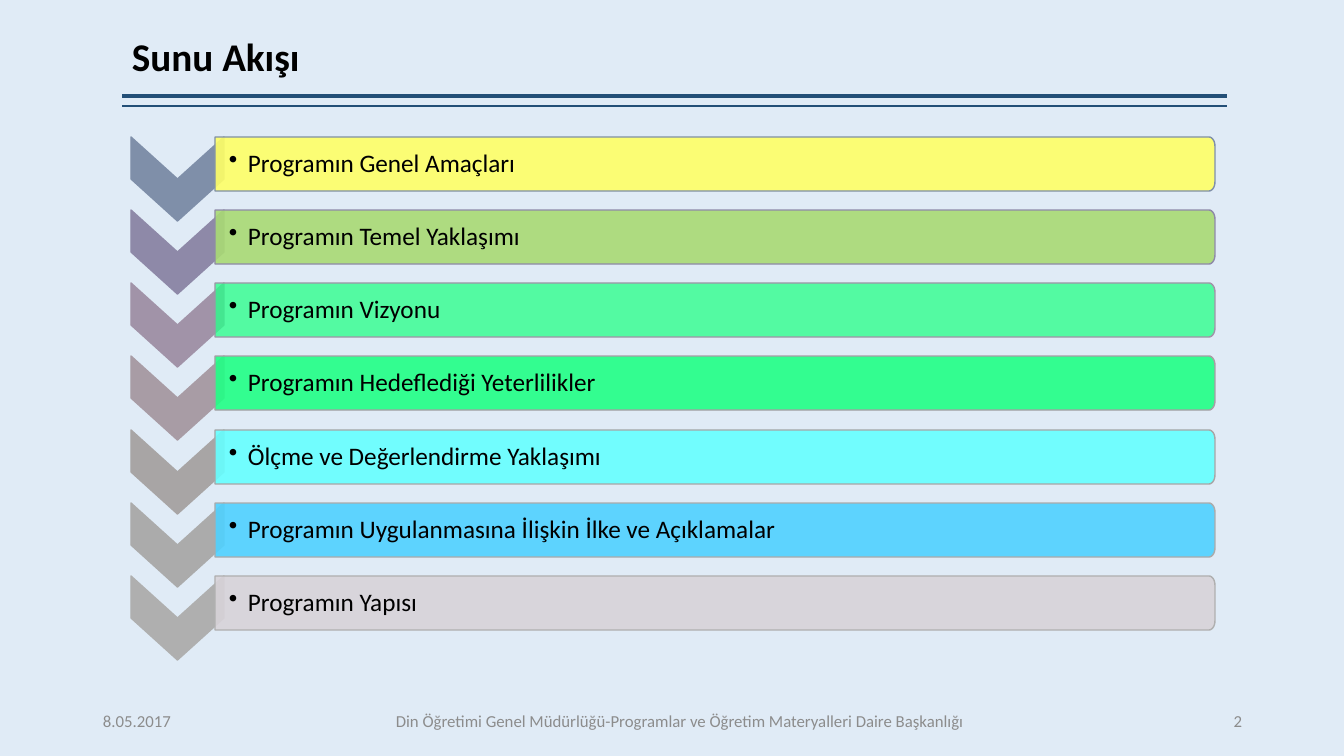
"""Build the agenda slide with seven chevrons and labelled bars."""
import math

from lxml import etree
from pptx import Presentation
from pptx.dml.color import RGBColor
from pptx.enum.shapes import MSO_CONNECTOR
from pptx.enum.text import MSO_ANCHOR, PP_ALIGN
from pptx.oxml.ns import qn
from pptx.util import Pt

STRAIGHT = MSO_CONNECTOR.STRAIGHT
MIDDLE = MSO_ANCHOR.MIDDLE
LEFT, CENTER, RIGHT = PP_ALIGN.LEFT, PP_ALIGN.CENTER, PP_ALIGN.RIGHT

PAGE_WIDTH, PAGE_HEIGHT = 1344, 756
EMU_PER_PX = 12192000 / PAGE_WIDTH
FONT = "Calibri"
COLORS = {
    "background": "E0EBF6",
    "rule": "234F77",
    "text": "000000",
    "footer": "8C8C8C",
}
TOPICS = [
    ("Programın Genel Amaçları", "7F8FA9", "FFFF66", 90),
    ("Programın Temel Yaklaşımı", "8E89A8", "A9DA74", 90),
    ("Programın Vizyonu", "A193A8", "29FF8A", 77),
    ("Programın Hedeflediği Yeterlilikler", "A89CA5", "21FF85", 90),
    ("Ölçme ve Değerlendirme Yaklaşımı", "A8A5A5", "66FFFF", 90),
    ("Programın Uygulanmasına İlişkin İlke ve Açıklamalar", "ABABAB", "4FD1FF", 90),
    ("Programın Yapısı", "AFAFAF", "D8D3D9", 90),
]
FIRST_TOP, LAST_TOP = 137, 576
CHEVRON_LEFT, CHEVRON_WIDTH, CHEVRON_ARM = 131, 93, 42
BAR_LEFT, BAR_RIGHT, BAR_HEIGHT = 215, 1215, 54
CORNER_WIDTH, CORNER_HEIGHT, CORNER_STEPS = 6, 9, 8
FOOTER_TOP, FOOTER_HEIGHT = 701, 40


def px(length):
    """Turn pixels into EMU."""
    return round(length * EMU_PER_PX)


def rgb(value):
    """Turn a hex string into a colour."""
    return RGBColor.from_string(value)


def style_font(para, size, color, bold=False):
    """Set the font of a whole paragraph."""
    para.font.name = FONT
    para.font.size = Pt(size)
    para.font.bold = bold
    para.font.color.rgb = rgb(color)


def add_text(page, frame, text, size, color, align=LEFT, bold=False):
    """Add a vertically centred one-line text box."""
    box = page.shapes.add_textbox(*map(px, frame))
    box.text_frame.word_wrap = True
    box.text_frame.vertical_anchor = MIDDLE
    para = box.text_frame.paragraphs[0]
    para.text = text
    para.alignment = align
    style_font(para, size, color, bold)
    return para


def add_rule(page, y, weight):
    """Add a horizontal rule under the title."""
    rule = page.shapes.add_connector(STRAIGHT, px(1227), px(y), px(122), px(y))
    rule.line.color.rgb = rgb(COLORS["rule"])
    rule.line.width = Pt(weight)
    etree.SubElement(rule._element.spPr, qn("a:effectLst"))


def add_outline(page, points, fill, line):
    """Add a closed polygon through the given pixel points."""
    corners = [(px(x), px(y)) for x, y in points]
    builder = page.shapes.build_freeform(*corners[0])
    builder.add_line_segments(corners[1:], close=True)
    shape = builder.convert_to_shape()
    shape.shadow.inherit = False
    shape.fill.solid()
    shape.fill.fore_color.rgb = rgb(fill)
    shape.line.color.rgb = rgb(line)
    shape.line.width = Pt(1)
    return shape


def add_chevron(page, top, color):
    """Add a chevron that points down."""
    right = CHEVRON_LEFT + CHEVRON_WIDTH
    middle = CHEVRON_LEFT + CHEVRON_WIDTH / 2
    upper = [(CHEVRON_LEFT, top), (middle, top + CHEVRON_ARM), (right, top)]
    lower = [(x, y + CHEVRON_ARM) for x, y in reversed(upper)]
    add_outline(page, upper + lower, color, color)


def bar_points(top):
    """Return the outline of a bar with rounded right corners."""
    angles = [math.pi / 2 * step / CORNER_STEPS for step in range(CORNER_STEPS + 1)]
    upper = [
        (
            BAR_RIGHT - CORNER_WIDTH * (1 - math.sin(angle)),
            top + CORNER_HEIGHT * (1 - math.cos(angle)),
        )
        for angle in angles
    ]
    lower = [(x, 2 * top + BAR_HEIGHT - y) for x, y in reversed(upper)]
    return [(BAR_LEFT, top), *upper, *lower, (BAR_LEFT, top + BAR_HEIGHT)]


def add_bullet(para, indent):
    """Give a paragraph a hanging round bullet."""
    properties = para._p.get_or_add_pPr()
    properties.set("marL", str(px(indent)))
    properties.set("indent", str(-px(indent)))
    etree.SubElement(properties, qn("a:buChar"), char="•")


def add_bar(page, top, text, fill, line, opacity):
    """Add a translucent bar with a bulleted label."""
    bar = add_outline(page, bar_points(top), fill, line)
    color = bar._element.spPr.find(qn("a:solidFill"))[0]
    etree.SubElement(color, qn("a:alpha"), val=str(opacity * 1000))
    frame = bar.text_frame
    frame.word_wrap = True
    frame.vertical_anchor = MIDDLE
    frame.margin_left = px(14)
    frame.margin_top = frame.margin_right = frame.margin_bottom = px(3)
    para = frame.paragraphs[0]
    para.text = text
    para.level = 1
    para.alignment = LEFT
    para.line_spacing = 0.9
    add_bullet(para, 19)
    style_font(para, 18, COLORS["text"])


def add_footer(page, left, width, text, align):
    """Add one part of the footer."""
    frame = (left, FOOTER_TOP, width, FOOTER_HEIGHT)
    add_text(page, frame, text, 12, COLORS["footer"], align)


def main():
    """Build and save the deck."""
    deck = Presentation()
    deck.slide_width, deck.slide_height = px(PAGE_WIDTH), px(PAGE_HEIGHT)
    page = deck.slides.add_slide(deck.slide_layouts[6])
    page.background.fill.solid()
    page.background.fill.fore_color.rgb = rgb(COLORS["background"])

    add_rule(page, 96, 3)
    add_rule(page, 106, 1)
    title = add_text(
        page, (122, 16, 1130, 85), "Sunu Akışı", 28, COLORS["text"], bold=True
    )
    title.line_spacing = 0.9

    pitch = (LAST_TOP - FIRST_TOP) / (len(TOPICS) - 1)
    for index, (text, accent, fill, opacity) in enumerate(TOPICS):
        top = round(FIRST_TOP + index * pitch)
        add_chevron(page, top, accent)
        add_bar(page, top, text, fill, accent, opacity)

    add_footer(page, 93, 126, "8.05.2017", LEFT)
    add_footer(
        page,
        252,
        856,
        "Din Öğretimi Genel Müdürlüğü-Programlar ve Öğretim Materyalleri Daire Başkanlığı",
        CENTER,
    )
    add_footer(page, 1135, 117, "2", RIGHT)
    deck.save("out.pptx")


if __name__ == "__main__":
    main()
